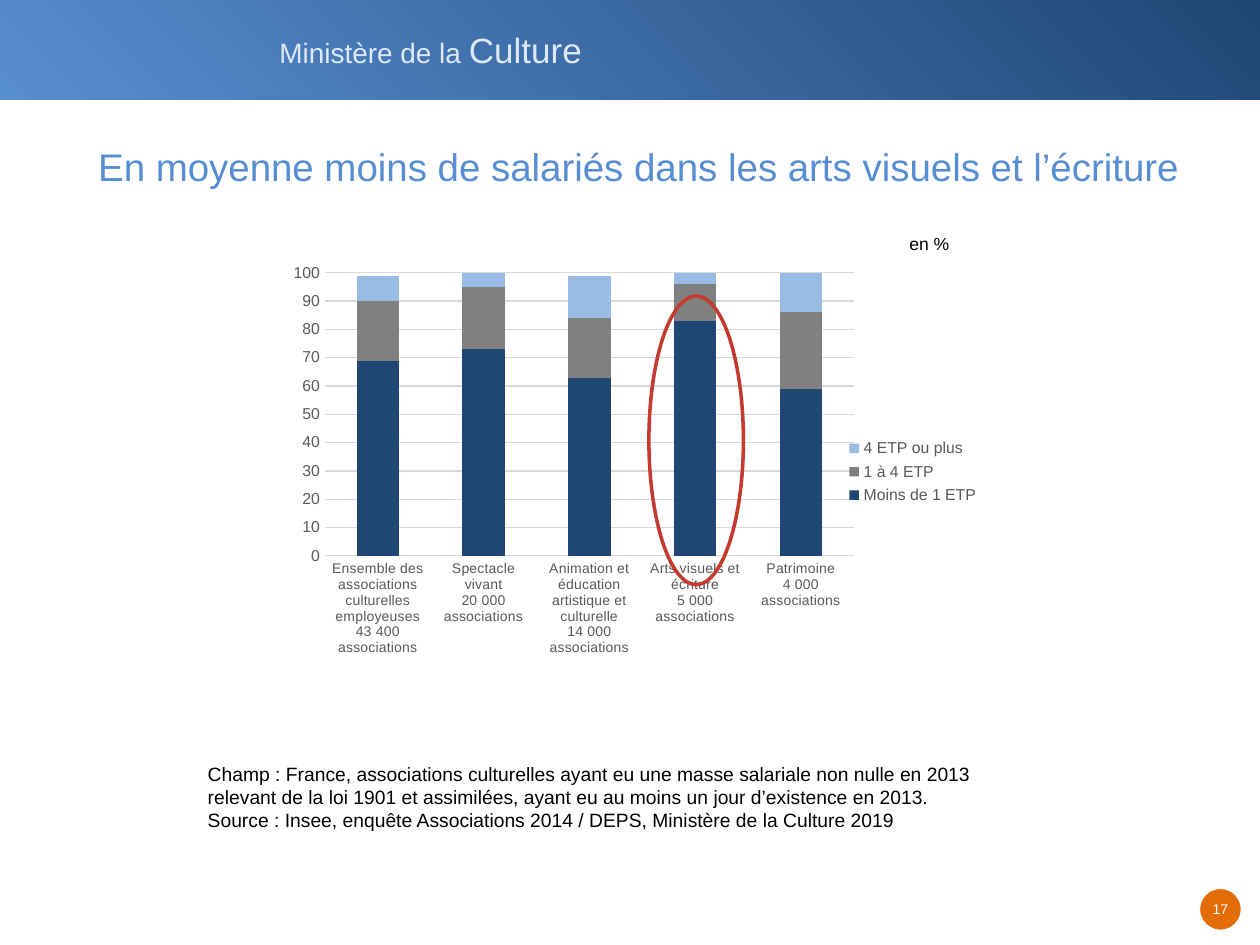
from pptx import Presentation
from pptx.chart.data import CategoryChartData
from pptx.dml.color import RGBColor
from pptx.enum.chart import XL_CHART_TYPE, XL_LEGEND_POSITION, XL_TICK_MARK
from pptx.enum.shapes import MSO_SHAPE
from pptx.enum.text import MSO_AUTO_SIZE, PP_ALIGN
from pptx.oxml import parse_xml
from pptx.oxml.ns import nsdecls
from pptx.util import Pt

STACKED = XL_CHART_TYPE.COLUMN_STACKED
RIGHT = XL_LEGEND_POSITION.RIGHT
NO_TICK = XL_TICK_MARK.NONE
RECT, OVAL = MSO_SHAPE.RECTANGLE, MSO_SHAPE.OVAL
GROW = MSO_AUTO_SIZE.SHAPE_TO_FIT_TEXT
LEFT, CENTER = PP_ALIGN.LEFT, PP_ALIGN.CENTER

NAVY = RGBColor(0x20, 0x46, 0x74)
BLUE = RGBColor(0x57, 0x8E, 0xD1)
SKY = RGBColor(0x9A, 0xBB, 0xE3)
PALE = RGBColor(0xDD, 0xE8, 0xF6)
GRAY = RGBColor(0x80, 0x80, 0x80)
DARK = RGBColor(0x59, 0x59, 0x59)
GRID = RGBColor(0xD9, 0xD9, 0xD9)
ORANGE = RGBColor(0xE3, 0x6C, 0x09)
RED = RGBColor(0xC4, 0x3A, 0x2F)
WHITE = RGBColor(0xFF, 0xFF, 0xFF)
BLACK = RGBColor(0, 0, 0)
FONT = "Arial"

CATS = [
    "Ensemble des associations culturelles employeuses\n43 400 associations",
    "Spectacle vivant\n20 000 associations",
    "Animation et éducation artistique et culturelle\n14 000 associations",
    "Arts visuels et écriture\n5 000 associations",
    "Patrimoine\n4 000 associations",
]
SERIES = [
    ("Moins de 1 ETP", (69, 73, 63, 83, 59), NAVY),
    ("1 à 4 ETP", (21, 22, 21, 13, 27), GRAY),
    ("4 ETP ou plus", (9, 5, 15, 4, 15), SKY),
]
PLOT = {"x": 0.08, "y": 0.05, "w": 0.73, "h": 0.64}  # shares of the chart box
NOTES = [
    "Champ : France, associations culturelles ayant eu une masse salariale non nulle "
    "en 2013 relevant de la loi 1901 et assimilées, ayant eu au moins un jour "
    "d’existence en 2013.",
    "Source : Insee, enquête Associations 2014 / DEPS, Ministère de la Culture 2019",
]


def style(font, size, color):
    font.name, font.size, font.color.rgb = FONT, Pt(size), color


def add_text(slide, box, lines, size, color, wrap=True, align=LEFT):
    frame = slide.shapes.add_textbox(*map(Pt, box)).text_frame
    frame.word_wrap = wrap
    frame.auto_size = GROW
    frame.text = "\n".join(lines)
    for para in frame.paragraphs:
        para.alignment = align
        style(para.font, size, color)
    return frame


def add_form(slide, kind, box):
    form = slide.shapes.add_shape(kind, *map(Pt, box))
    form.shadow.inherit = False
    return form


def add_header(slide, x, y, w, h):
    band = add_form(slide, RECT, (x, y, w, h))
    band.line.fill.background()
    band.fill.gradient()
    band.fill.gradient_angle = 225
    for stop, color in zip(band.fill.gradient_stops, (NAVY, BLUE)):
        stop.color.rgb = color
    box = (x + 152.64, y + 13, 189.4, 31.7)
    name = add_text(slide, box, ["Ministère de la "], 16, PALE, wrap=False)
    run = name.paragraphs[0].add_run()
    run.text = "Culture"
    run.font.size = Pt(20)


def add_title(slide, x, y, w, h):
    title = "En moyenne moins de salariés dans les arts visuels et l’écriture"
    frame = add_text(slide, (x, y, w, h), [title], 22, BLUE)
    frame.auto_size = MSO_AUTO_SIZE.NONE
    frame.paragraphs[0].line_spacing = Pt(28)


def fix_plot(chart):
    """Pin the inner plot area to the shares in PLOT."""
    area = chart.plots[0]._element.getparent()
    for old in area.findall("{*}layout"):
        area.remove(old)
    spots = "".join(f'<c:{key} val="{val}"/>' for key, val in PLOT.items())
    area.insert(0, parse_xml(
        f'<c:layout {nsdecls("c")}><c:manualLayout><c:layoutTarget val="inner"/>'
        f'<c:xMode val="edge"/><c:yMode val="edge"/>{spots}'
        f'</c:manualLayout></c:layout>'))


def add_bars(slide, x, y, w, h):
    data = CategoryChartData(number_format="0")
    data.categories = CATS
    for name, vals, _ in SERIES:
        data.add_series(name, vals)
    chart = slide.shapes.add_chart(STACKED, *map(Pt, (x, y, w, h)), data).chart
    chart.has_title = False
    style(chart.font, 10, BLACK)

    plot = chart.plots[0]
    plot.gap_width, plot.overlap = 150, 100
    plot.vary_by_categories = False
    for series, (_, _, color) in zip(plot.series, SERIES):
        series.format.fill.solid()
        series.format.fill.fore_color.rgb = color

    cats, vals = chart.category_axis, chart.value_axis
    for axis, size in ((cats, 8), (vals, 9)):
        axis.major_tick_mark = axis.minor_tick_mark = NO_TICK
        style(axis.tick_labels.font, size, DARK)
    vals.minimum_scale, vals.maximum_scale, vals.major_unit = 0, 100, 10
    vals.tick_labels.number_format = "0"
    vals.tick_labels.number_format_is_linked = False
    vals.format.line.fill.background()
    for line in (cats.format.line, vals.major_gridlines.format.line):
        line.color.rgb = GRID
        line.width = Pt(0.75)

    chart.has_legend = True
    chart.legend.position = RIGHT
    chart.legend.include_in_layout = False
    style(chart.legend.font, 9, DARK)
    fix_plot(chart)


def add_figure(slide, x, y, w, h):
    """Chart with its unit above and a ring round the fourth column."""
    add_bars(slide, x, y, w, h)
    add_text(slide, (x + 360, y - 13.7, 40.3, 19.4), ["en %"], 10, BLACK)
    ring = add_form(slide, OVAL, (x + 218.2, y + 25.9, 54, 164.9))
    ring.fill.background()
    ring.line.color.rgb = RED
    ring.line.width = Pt(2)


def add_page(slide, x, y, size):
    disc = add_form(slide, OVAL, (x, y, size, size))
    disc.fill.solid()
    disc.fill.fore_color.rgb = ORANGE
    disc.line.color.rgb = WHITE
    disc.line.width = Pt(0.75)
    frame = add_text(slide, (x + 1.2, y + 3.6, size - 2.4, 16.6), ["17"], 8,
                     WHITE, wrap=False, align=CENTER)
    frame.margin_left = frame.margin_right = Pt(3.6)


def main():
    deck = Presentation()
    deck.slide_width, deck.slide_height = Pt(720), Pt(540)
    slide = deck.slides.add_slide(deck.slide_layouts[6])
    add_header(slide, 0, 0, 720, 57)
    add_page(slide, 685.4, 507.6, 24)
    add_figure(slide, 152.6, 143.3, 414, 252.7)
    add_title(slide, 49, 76.3, 639.4, 58.3)
    add_text(slide, (111.6, 432, 486, 47.5), NOTES, 11, BLACK)
    deck.save("out.pptx")


if __name__ == "__main__":
    main()
